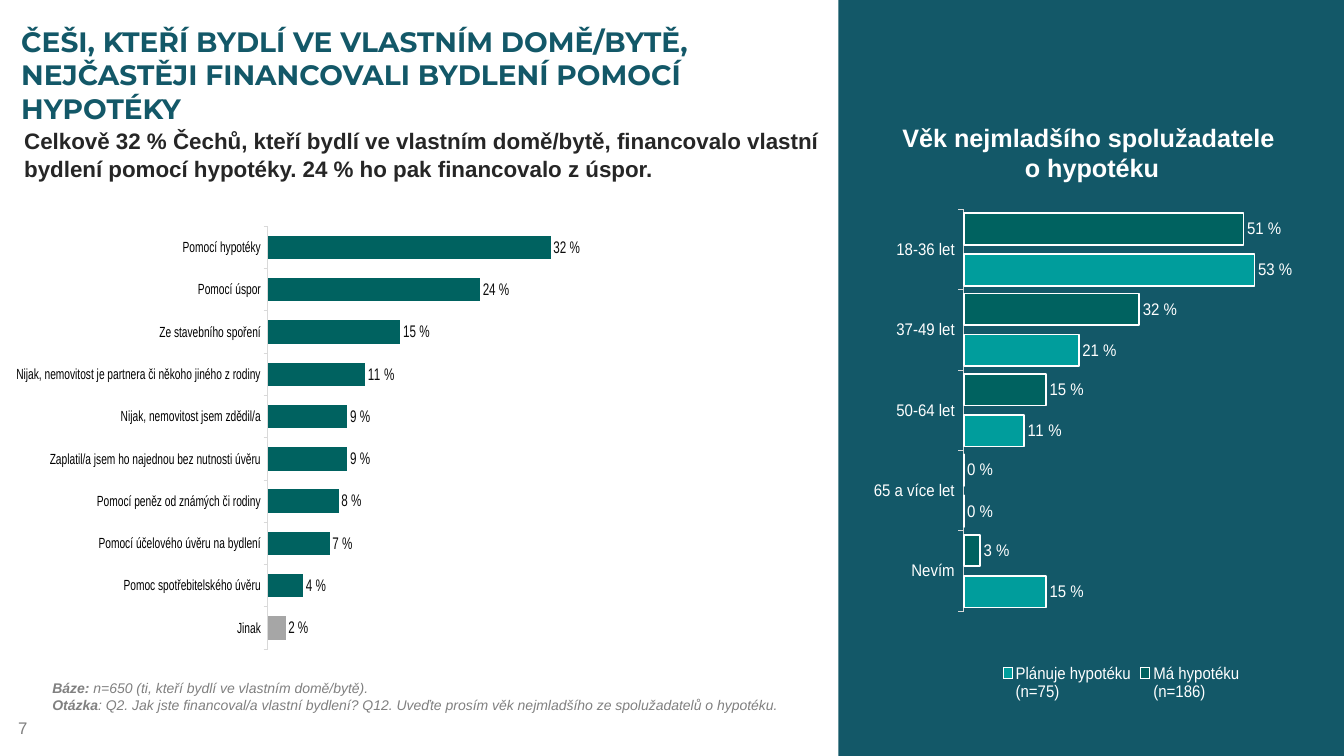
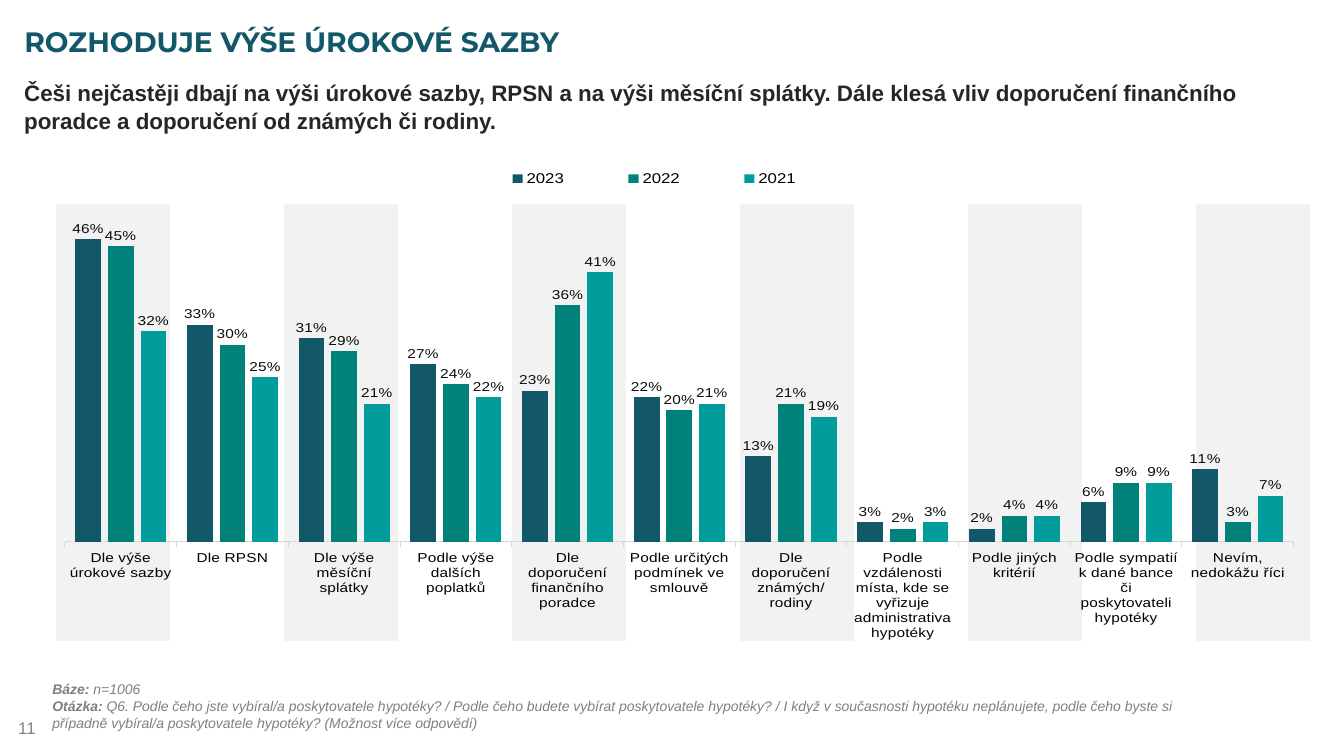
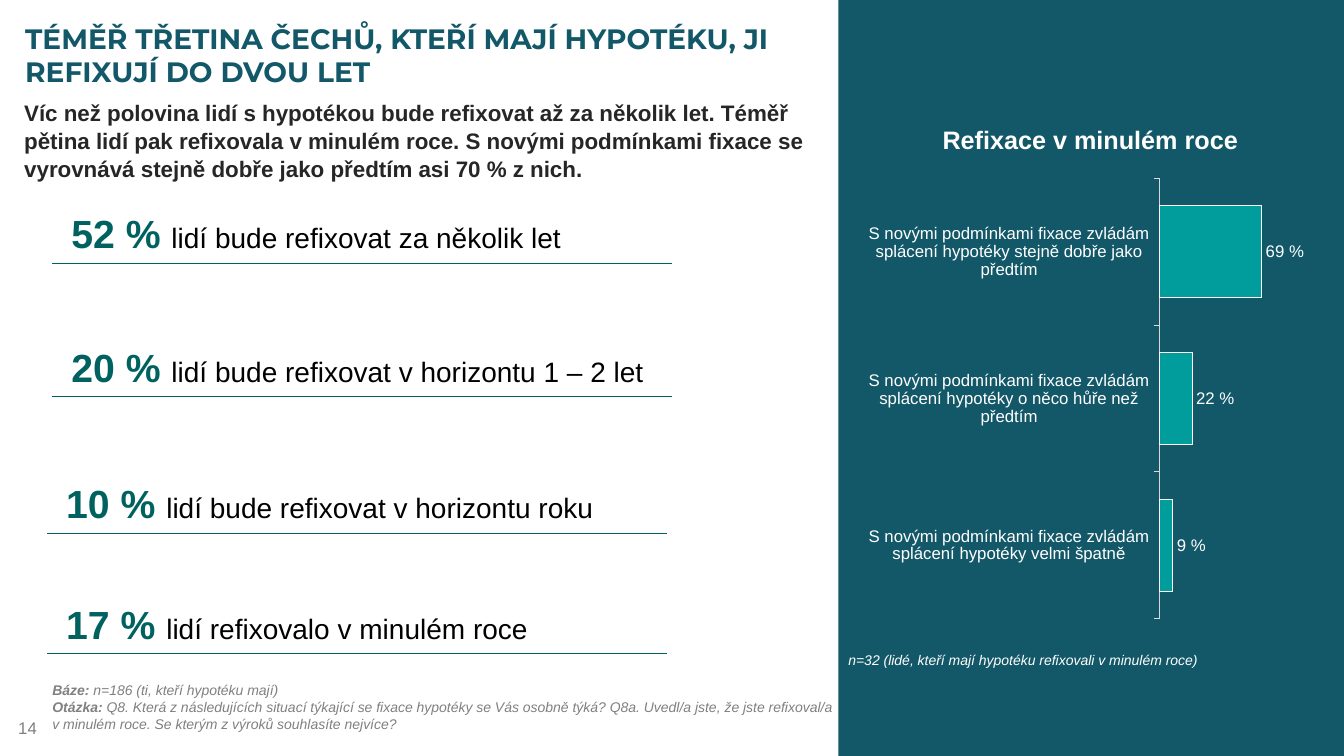
from lxml.etree import SubElement
from pptx import Presentation
from pptx.chart.data import CategoryChartData
from pptx.dml.color import RGBColor
from pptx.enum.chart import XL_CHART_TYPE as CT, XL_LABEL_POSITION as LP
from pptx.enum.chart import XL_LEGEND_POSITION as LEGEND, XL_TICK_MARK as TICK
from pptx.enum.shapes import MSO_CONNECTOR, MSO_SHAPE
from pptx.enum.text import MSO_ANCHOR as ANCHOR, MSO_AUTO_SIZE as AUTO, PP_ALIGN as ALIGN
from pptx.oxml import parse_xml
from pptx.oxml.ns import nsdecls, qn
from pptx.util import Cm, Pt

NAVY = RGBColor(0x13, 0x58, 0x68)
GREEN = RGBColor(0x00, 0x62, 0x60)
TEAL = RGBColor(0x00, 0x82, 0x7A)
AQUA = RGBColor(0x00, 0x9D, 0x9C)
WHITE = RGBColor(0xFF, 0xFF, 0xFF)
BLACK = RGBColor(0x00, 0x00, 0x00)
INK = RGBColor(0x26, 0x26, 0x26)
LABEL = RGBColor(0x0D, 0x0D, 0x0D)
GRAY = RGBColor(0x80, 0x80, 0x80)
BAR_GRAY = RGBColor(0xA6, 0xA6, 0xA6)
AXIS_GRAY = RGBColor(0xD9, 0xD9, 0xD9)
STRIPE = RGBColor(0xF2, 0xF2, 0xF2)

SLIDE_W, SLIDE_H = 33.87, 19.05
PANEL_LEFT = 21.13
PLAIN_TABLE = "{2D5ABB26-0587-4C30-8999-92F81FD0307C}"
SPACED_PERCENT = '0 "%"'
TIGHT_PERCENT = '0"%"'


def cms(*lengths):
    """Turn centimetre numbers into lengths."""
    return [Cm(n) for n in lengths]


def style(font, size, color, bold=False, italic=False, name="Arial"):
    """Format a font."""
    font.name, font.size, font.bold, font.italic = name, Pt(size), bold, italic
    font.color.rgb = color


def set_insets(tf, left, top, right, bottom):
    """Set the four inner margins of a text frame or cell."""
    tf.margin_left, tf.margin_top, tf.margin_right, tf.margin_bottom = cms(left, top, right, bottom)


def add_run(p, text, *font, **flags):
    """Append a formatted run to a paragraph."""
    r = p.add_run()
    r.text = text
    style(r.font, *font, **flags)


def add_text(slide, box, text, size, color, bold=False, italic=False, align=ALIGN.LEFT):
    """Add a wrapping text box with one paragraph style."""
    tf = slide.shapes.add_textbox(*cms(*box)).text_frame
    tf.word_wrap = True
    tf.text = text
    for p in tf.paragraphs:
        p.alignment = align
        for r in p.runs:
            style(r.font, size, color, bold, italic)
    return tf


def add_slide(prs, number, title, title_box, lead, lead_box):
    """Add a slide with its title, lead text and number."""
    slide = prs.slides.add_slide(prs.slide_layouts[5])
    sp = slide.shapes.title
    sp.left, sp.top, sp.width, sp.height = cms(*title_box)
    tf = sp.text_frame
    tf.text = title
    tf.word_wrap, tf.auto_size, tf.vertical_anchor = True, AUTO.NONE, ANCHOR.MIDDLE
    tf.paragraphs[0].alignment = ALIGN.LEFT
    style(tf.paragraphs[0].runs[0].font, 20, NAVY, bold=True, name="Montserrat")

    tf = add_text(slide, lead_box, lead, 16, INK, bold=True)
    tf.margin_top = Cm(0.22)
    tf.paragraphs[0].line_spacing = 1.05

    tf = add_text(slide, (0.13, 17.83, 7.9, 1.02), number, 12, GRAY)
    tf.vertical_anchor = ANCHOR.MIDDLE
    set_insets(tf, 0.33, 0.18, 0.33, 0.18)
    return slide


def add_source(slide, box, *notes):
    """Add the footnote, one bold lead-in and its text per line."""
    tf = add_text(slide, box, "", 10, GRAY)
    set_insets(tf, 0, 0, 0, 0)
    for i, (lead, text) in enumerate(notes):
        p = tf.add_paragraph() if i else tf.paragraphs[0]
        add_run(p, lead, 10, GRAY, bold=True, italic=True)
        add_run(p, text, 10, GRAY, italic=True)


def add_panel(slide):
    """Add the dark panel on the right."""
    sp = slide.shapes.add_shape(MSO_SHAPE.RECTANGLE, *cms(PANEL_LEFT, 0, SLIDE_W - PANEL_LEFT, SLIDE_H))
    sp.shadow.inherit = False
    sp.fill.solid()
    sp.fill.fore_color.rgb = NAVY
    sp.line.fill.background()


def add_table(slide, box, columns):
    """Add a one-row table without borders or fills."""
    table = slide.shapes.add_table(1, columns, *cms(*box)).table
    table.first_row = table.horz_banding = False
    table._tbl.tblPr.find(qn("a:tableStyleId")).text = PLAIN_TABLE
    for cell in table.iter_cells():
        cell.fill.background()
    return table


def set_layout(parent, x, y, w, h, inner=False):
    """Place a chart part by fractions of the chart."""
    layout = parent.find(qn("c:layout"))
    if layout is None:
        layout = parse_xml(f"<c:layout {nsdecls('c')}/>")
        if inner:
            parent.insert(0, layout)
        else:
            parent.find(qn("c:legendPos")).addnext(layout)
    for child in list(layout):
        layout.remove(child)
    manual = SubElement(layout, qn("c:manualLayout"))
    parts = [("layoutTarget", "inner")] if inner else []
    parts += [("xMode", "edge"), ("yMode", "edge"), ("x", x), ("y", y), ("w", w), ("h", h)]
    for tag, value in parts:
        SubElement(manual, qn("c:" + tag)).set("val", str(value))


def add_chart(slide, box, kind, cats, series, plot_box, gap, overlap=0, color=BLACK,
              axis_size=12, label_size=12, number_format=SPACED_PERCENT, outline=None,
              reverse=False, limits=(None, None)):
    """Add a clustered chart; series holds name, colour and values."""
    data = CategoryChartData()
    data.categories = cats
    for name, _, values in series:
        data.add_series(name, values)
    chart = slide.shapes.add_chart(kind, *cms(*box), data).chart
    chart.has_title = chart.has_legend = False
    style(chart.font, 10, color)
    space = chart._chartSpace
    clear = f"<c:spPr {nsdecls('c', 'a')}><a:noFill/><a:ln><a:noFill/></a:ln></c:spPr>"
    space.chart.addnext(parse_xml(clear))
    set_layout(space.chart.plotArea, *plot_box, inner=True)

    axis = chart.category_axis
    axis.major_tick_mark, axis.minor_tick_mark = TICK.OUTSIDE, TICK.NONE
    axis.has_major_gridlines = False
    axis.reverse_order = reverse
    axis.format.line.color.rgb = AXIS_GRAY
    axis.format.line.width = Pt(0.75)
    style(axis.tick_labels.font, axis_size, color)
    axis = chart.value_axis
    axis.has_major_gridlines = axis.visible = False
    axis.minimum_scale, axis.maximum_scale = limits

    plot = chart.plots[0]
    plot.gap_width, plot.overlap, plot.vary_by_categories = gap, overlap, False
    for ser, (_, fill, _) in zip(plot.series, series):
        ser.invert_if_negative = False
        ser.format.fill.solid()
        ser.format.fill.fore_color.rgb = fill
        if outline:
            ser.format.line.color.rgb = WHITE
            ser.format.line.width = Pt(outline)
        labels = ser.data_labels
        labels.show_value, labels.position = True, LP.OUTSIDE_END
        labels.number_format, labels.number_format_is_linked = number_format, False
        style(labels.font, label_size, LABEL if color == BLACK else color)
    return chart


def add_legend(chart, position, color):
    """Add a legend beside the plot."""
    chart.has_legend = True
    chart.legend.position = position
    chart.legend.include_in_layout = False
    style(chart.legend.font, 12, color)


def add_fact(slide, left, top, share, text):
    """Add a large share with its text and a rule below."""
    p = add_text(slide, (left, top, 15.24, 1.45), "", 20, BLACK).paragraphs[0]
    add_run(p, share + " ", 28, GREEN, bold=True)
    add_run(p, text, 20, BLACK)
    x, y = left - 0.23, top + 1.47
    line = slide.shapes.add_connector(MSO_CONNECTOR.STRAIGHT, *cms(x, y, x + 15.62, y))
    line.line.color.rgb = GREEN
    line.line.width = Pt(0.5)
    SubElement(line._element.spPr, qn("a:effectLst"))


def build_financing(prs):
    """Build the slide on how housing was financed."""
    slide = add_slide(
        prs, "7",
        "ČEŠI, KTEŘÍ BYDLÍ VE VLASTNÍM DOMĚ/BYTĚ, NEJČASTĚJI FINANCOVALI BYDLENÍ POMOCÍ HYPOTÉKY",
        (0.28, 0.1, 20.78, 3.56),
        "Celkově 32 % Čechů, kteří bydlí ve vlastním domě/bytě, financovalo vlastní bydlení "
        "pomocí hypotéky. 24 % ho pak financovalo z úspor.",
        (0.36, 2.95, 20.78, 2.31))
    add_source(
        slide, (1.32, 17.12, 19.81, 0.86),
        ("Báze: ", "n=650 (ti, kteří bydlí ve vlastním domě/bytě)."),
        ("Otázka", ": Q2. Jak jste financoval/a vlastní bydlení? Q12. Uveďte prosím věk "
                   "nejmladšího ze spolužadatelů o hypotéku."))
    ways = {
        "Pomocí hypotéky": 32,
        "Pomocí úspor": 24,
        "Ze stavebního spoření": 15,
        "Nijak, nemovitost je partnera či někoho jiného z rodiny": 11,
        "Nijak, nemovitost jsem zdědil/a": 9,
        "Zaplatil/a jsem ho najednou bez nutnosti úvěru": 9,
        "Pomocí peněz od známých či rodiny": 8,
        "Pomocí účelového úvěru na bydlení": 7,
        "Pomoc spotřebitelského úvěru": 4,
        "Jinak": 2,
    }
    chart = add_chart(slide, (0.41, 5, 20.78, 11.71), CT.BAR_CLUSTERED, list(ways),
                      [("Series 1", GREEN, list(ways.values()))],
                      (0, 0.06, 0.54, 0.91), 80, axis_size=10.5, reverse=True)
    other = chart.plots[0].series[0].points[len(ways) - 1].format.fill
    other.solid()
    other.fore_color.rgb = BAR_GRAY

    add_panel(slide)
    chart = add_chart(slide, (22.02, 4.75, 11.28, 13), CT.BAR_CLUSTERED,
                      ["18-36 let", "37-49 let", "50-64 let", "65 a více let", "Nevím"],
                      [("Má hypotéku\n(n=186)", GREEN, [51, 32, 15, 0, 3]),
                       ("Plánuje hypotéku\n(n=75)", AQUA, [53, 21, 11, 0, 15])],
                      (0.01, 0.04, 0.96, 0.78), 25, -30, WHITE, outline=1.5,
                      reverse=True, limits=(None, 63))
    add_legend(chart, LEGEND.BOTTOM, WHITE)
    add_text(slide, (21.82, 2.95, 11.4, 1.8), "Věk nejmladšího spolužadatele \vo hypotéku",
             18, WHITE, bold=True, align=ALIGN.CENTER)


def build_criteria(prs):
    """Build the slide on criteria for choosing a lender."""
    slide = add_slide(
        prs, "11", "ROZHODUJE VÝŠE ÚROKOVÉ SAZBY", (0.36, 0.36, 33.15, 1.35),
        "Češi nejčastěji dbají na výši úrokové sazby, RPSN a na výši měsíční splátky. Dále "
        "klesá vliv doporučení finančního poradce a doporučení od známých či rodiny.",
        (0.36, 1.73, 33.15, 1.78))
    criteria = [
        "Dle výše úrokové sazby", "Dle RPSN", "Dle výše měsíční splátky",
        "Podle výše dalších poplatků", "Dle doporučení finančního poradce",
        "Podle určitých podmínek ve smlouvě", "Dle doporučení známých/rodiny",
        "Podle vzdálenosti místa, kde se vyřizuje administrativa hypotéky",
        "Podle jiných kritérií", "Podle sympatií k dané bance či poskytovateli hypotéky",
        "Nevím, nedokážu říci",
    ]
    stripes = add_table(slide, (1.42, 5.13, 31.6, 11.02), len(criteria))
    for cell in list(stripes.iter_cells())[::2]:
        cell.fill.solid()
        cell.fill.fore_color.rgb = STRIPE
    chart = add_chart(slide, (1.32, 3.94, 31.6, 12.19), CT.COLUMN_CLUSTERED, criteria,
                      [("2023", NAVY, [46, 33, 31, 27, 23, 22, 13, 3, 2, 6, 11]),
                       ("2022", TEAL, [45, 30, 29, 24, 36, 20, 21, 2, 4, 9, 3]),
                       ("2021", AQUA, [32, 25, 21, 22, 41, 21, 19, 3, 4, 9, 7])],
                      (0.01, 0.14, 0.98, 0.81), 80, -27, axis_size=11, label_size=11,
                      number_format=TIGHT_PERCENT)
    add_legend(chart, LEGEND.TOP, BLACK)
    set_layout(chart.legend._element, 0.32, 0.02, 0.32, 0.07)
    add_source(
        slide, (1.32, 17.15, 29.41, 1.27),
        ("Báze: ", "n=1006"),
        ("Otázka: ", "Q6. Podle čeho jste vybíral/a poskytovatele hypotéky? / Podle čeho budete "
                     "vybírat poskytovatele hypotéky? / I když v současnosti hypotéku neplánujete, "
                     "podle čeho byste si případně vybíral/a poskytovatele hypotéky? "
                     "(Možnost více odpovědí)"))


def build_refixing(prs):
    """Build the slide on mortgage refixing."""
    slide = add_slide(
        prs, "14", "TÉMĚŘ TŘETINA ČECHŮ, KTEŘÍ MAJÍ HYPOTÉKU, JI REFIXUJÍ DO DVOU LET",
        (0.38, 0.71, 20.78, 1.35),
        "Víc než polovina lidí s hypotékou bude refixovat až za několik let. Téměř pětina lidí "
        "pak refixovala v minulém roce. S novými podmínkami fixace se vyrovnává stejně dobře "
        "jako předtím asi 70 % z nich.",
        (0.36, 2.24, 20.68, 1.78))
    add_source(
        slide, (1.32, 17.17, 19.71, 1.27),
        ("Báze: ", "n=186 (ti, kteří hypotéku mají)"),
        ("Otázka: ", "Q8. Která z následujících situací týkající se fixace hypotéky se Vás osobně "
                     "týká? Q8a. Uvedl/a jste, že jste refixoval/a v minulém roce. Se kterým "
                     "z výroků souhlasíte nejvíce?"))
    for fact in [(1.55, 5.16, "52 %", "lidí bude refixovat za několik let"),
                 (1.55, 8.53, "20 %", "lidí bude refixovat v horizontu 1 – 2 let"),
                 (1.42, 11.96, "10 %", "lidí bude refixovat v horizontu roku"),
                 (1.42, 14.99, "17 %", "lidí refixovalo v minulém roce")]:
        add_fact(slide, *fact)

    add_panel(slide)
    cell = add_table(slide, (21.08, 2.84, 12.79, 1.37), 1).cell(0, 0)
    cell.text = "Refixace v minulém roce"
    cell.vertical_anchor = ANCHOR.MIDDLE
    set_insets(cell, 0.03, 0.03, 0.03, 0)
    p = cell.text_frame.paragraphs[0]
    p.alignment = ALIGN.CENTER
    style(p.runs[0].font, 18, WHITE, bold=True)
    coping = ["velmi špatně", "o něco hůře než předtím", "stejně dobře jako předtím"]
    add_chart(slide, (PANEL_LEFT, 4.01, 12.45, 12.19), CT.BAR_CLUSTERED,
              [f"S novými podmínkami fixace zvládám splácení hypotéky {how}" for how in coping],
              [("Series 1", AQUA, [9, 22, 69])],
              (0.65, 0.04, 0.3, 0.91), 60, color=WHITE, outline=0.75, limits=(0, 100))
    add_text(slide, (PANEL_LEFT, 16.28, 12.7, 0.69),
             "n=32 (lidé, kteří mají hypotéku refixovali v minulém roce)", 10, WHITE, italic=True)


def main():
    """Build and save the presentation."""
    prs = Presentation()
    prs.slide_width, prs.slide_height = cms(SLIDE_W, SLIDE_H)
    build_financing(prs)
    build_criteria(prs)
    build_refixing(prs)
    prs.save("out.pptx")


if __name__ == "__main__":
    main()
